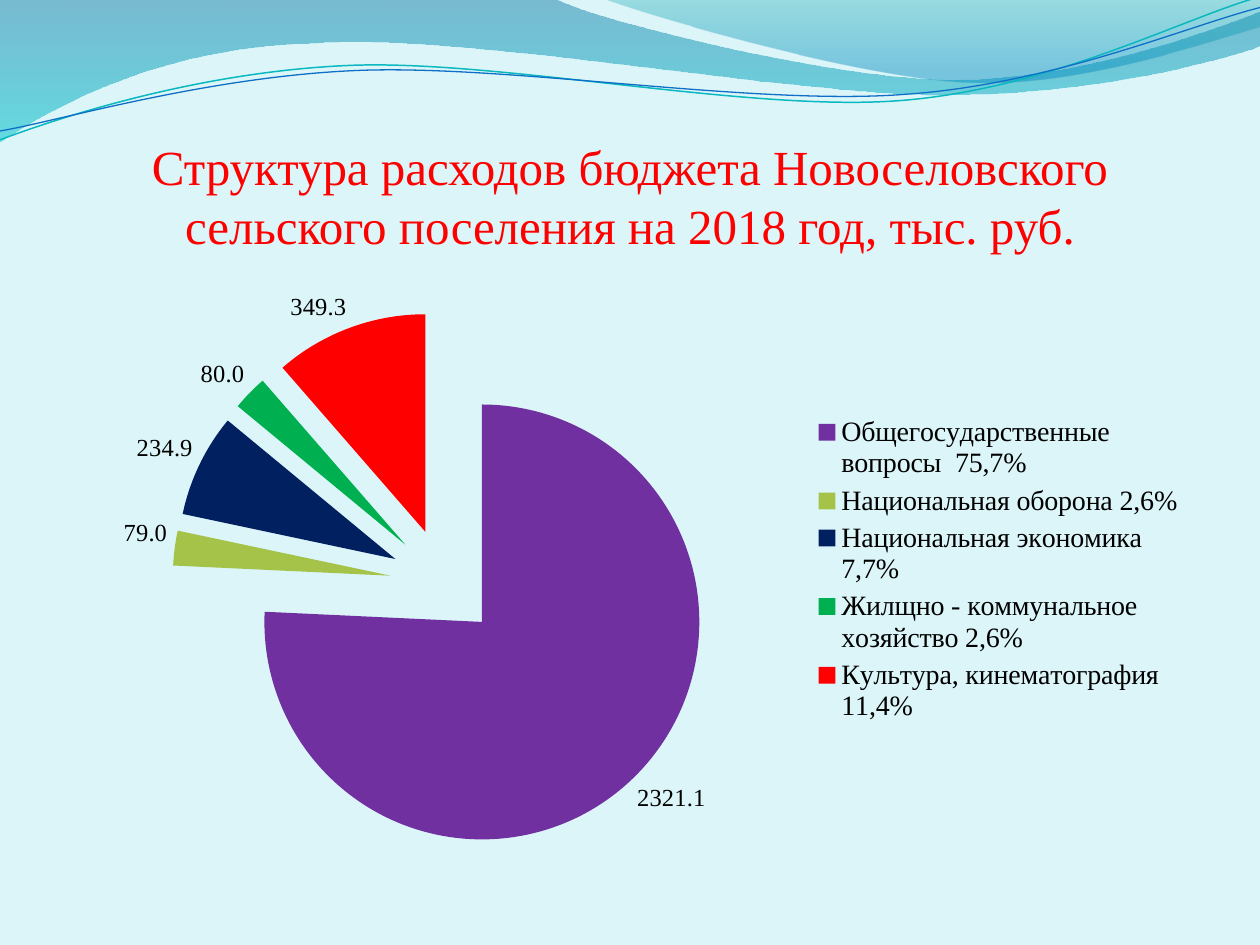
from dataclasses import dataclass

from lxml import etree
from pptx import Presentation
from pptx.chart.data import CategoryChartData
from pptx.dml.color import RGBColor
from pptx.enum.chart import XL_CHART_TYPE, XL_LABEL_POSITION, XL_LEGEND_POSITION
from pptx.enum.text import MSO_ANCHOR, PP_ALIGN
from pptx.oxml.ns import qn
from pptx.util import Inches, Pt

PIE = XL_CHART_TYPE.PIE
LEGEND_RIGHT = XL_LEGEND_POSITION.RIGHT
OUTSIDE_END = XL_LABEL_POSITION.OUTSIDE_END
BOTTOM = MSO_ANCHOR.BOTTOM
CENTER = PP_ALIGN.CENTER
TITLE_ONLY = 5
UNITS_PER_INCH = 100


@dataclass(frozen=True)
class Theme:
    font: str = "Times New Roman"
    background: str = "DBF5F9"
    title: str = "FF0000"
    text: str = "000000"
    title_size: int = 28
    legend_size: int = 16
    label_size: int = 14
    # Gradient stops: position, colour, opacity in percent
    wide_wave: tuple = ((0, "0074A1", 45), (1, "00C6CF", 55))
    right_wave: tuple = ((0, "00A1A9", 30), (0.8, "008BBF", 45))
    teal_line: str = "0AB8BF"
    blue_line: str = "0F6FC6"
    slices: tuple = ("7030A0", "A5C249", "002060", "00B050", "FF0000")


# Outlines: a pair is a corner, a triple of pairs is a Bezier segment.
WIDE_WAVE = [
    (0, 0), (4.4, -0.01),
    ((4.76, 0.17), (6.64, 0.63), (7.58, 0.63)),
    ((8.53, 0.63), (9.58, 0.26), (10, 0.09)),
    (10.01, 0.36),
    ((9.83, 0.44), (8.7, 0.76), (7.46, 0.75)),
    ((6.22, 0.75), (3.82, 0.28), (2.57, 0.34)),
    ((1.29, 0.36), (0.46, 0.83), (-0.01, 1.13)),
    (0, 0),
]
RIGHT_WAVE = [
    (4.79, -0.01),
    ((5.09, 0.11), (6.82, 0.62), (7.69, 0.65)),
    ((8.56, 0.69), (9.61, 0.32), (10, 0.21)),
    (10, 0), (4.79, -0.01),
]
TEAL_CURVE = [
    (0, 1.11),
    ((0.48, 0.93), (1.58, 0.57), (2.77, 0.52)),
    ((3.95, 0.47), (5.93, 0.89), (7.13, 0.8)),
    ((8.33, 0.71), (9.38, 0.15), (9.98, -0.02)),
]
BLUE_CURVE = [
    (0, 1.04),
    ((0.47, 0.96), (1.64, 0.61), (2.83, 0.56)),
    ((4.03, 0.51), (5.97, 0.84), (7.17, 0.75)),
    ((8.36, 0.67), (9.41, 0.21), (10, 0.06)),
]

EXPENSES = {
    "Общегосударственные вопросы  75,7%": 2321.1,
    "Национальная оборона 2,6%": 79,
    "Национальная экономика 7,7%": 234.9,
    "Жилщно - коммунальное хозяйство 2,6%": 80,
    "Культура, кинематография 11,4%": 349.3,
}


def rgb(value):
    return RGBColor.from_string(value)


def is_bezier(item):
    return isinstance(item[0], tuple)


class SlideBuilder:
    def __init__(self, prs, theme):
        self.theme = theme
        self.slide = prs.slides.add_slide(prs.slide_layouts[TITLE_ONLY])
        fill = self.slide.background.fill
        fill.solid()
        fill.fore_color.rgb = rgb(theme.background)

    def outline(self, outline, close):
        """Draw straight lines through all nodes, then merge triples into Beziers."""
        nodes = []
        for item in outline:
            nodes.extend(item if is_bezier(item) else [item])
        start, *rest = [(round(x * UNITS_PER_INCH), round(y * UNITS_PER_INCH))
                        for x, y in nodes]
        builder = self.slide.shapes.build_freeform(
            *start, scale=Inches(1) / UNITS_PER_INCH)
        builder.add_line_segments(rest, close=close)
        sp = builder.convert_to_shape()
        sp.shadow.inherit = False

        lines = iter(list(sp._element.iter(qn("a:lnTo"))))
        for item in outline[1:]:
            first = next(lines)
            if is_bezier(item):
                bezier = etree.Element(qn("a:cubicBezTo"))
                first.addprevious(bezier)
                for line in (first, next(lines), next(lines)):
                    bezier.append(line[0])
                    line.getparent().remove(line)
        return sp

    def wave(self, outline, stops):
        sp = self.outline(outline, close=True)
        sp.line.fill.background()
        sp.fill.gradient()
        sp.fill.gradient_angle = 270
        for stop, (position, color, _) in zip(sp.fill.gradient_stops, stops):
            stop.position = position
            stop.color.rgb = rgb(color)
        for clr, (_, _, opacity) in zip(sp._element.spPr.iter(qn("a:srgbClr")), stops):
            etree.SubElement(clr, qn("a:alpha"), val=str(opacity * 1000))

    def curve(self, outline, color, width):
        sp = self.outline(outline, close=False)
        sp.fill.background()
        sp.line.color.rgb = rgb(color)
        sp.line.width = Pt(width)

    def style(self, font, size, color):
        font.name = self.theme.font
        font.size = Pt(size)
        font.color.rgb = rgb(color)

    def title(self, text, left, top, width, height):
        sp = self.slide.shapes.title
        sp.left, sp.top, sp.width, sp.height = map(Inches, (left, top, width, height))
        self.slide.shapes._spTree.append(sp._element)  # bring in front of the waves
        tf = sp.text_frame
        tf.word_wrap = True
        tf.vertical_anchor = BOTTOM
        tf.margin_left = tf.margin_right = tf.margin_bottom = 0
        tf.margin_top = Inches(0.05)
        p = tf.paragraphs[0]
        p.alignment = CENTER
        r = p.add_run()
        r.text = text
        self.style(r.font, self.theme.title_size, self.theme.title)

    def pie(self, values, explosion, left, top, width, height):
        data = CategoryChartData(number_format="0.0")
        data.categories = list(values)
        data.add_series("Series 1", values.values())
        box = map(Inches, (left, top, width, height))
        chart = self.slide.shapes.add_chart(PIE, *box, data).chart
        chart.has_title = False
        self.style(chart.font, self.theme.legend_size, self.theme.text)

        chart.has_legend = True
        chart.legend.position = LEGEND_RIGHT
        chart.legend.include_in_layout = False
        self.style(chart.legend.font, self.theme.legend_size, self.theme.text)

        series = chart.plots[0].series[0]
        for i, color in enumerate(self.theme.slices):
            fill = series.points[i].format.fill
            fill.solid()
            fill.fore_color.rgb = rgb(color)
        exploded = etree.Element(qn("c:explosion"), val=str(explosion))
        series._element.find(qn("c:dPt")).addprevious(exploded)

        labels = series.data_labels
        labels.show_value = True
        labels.position = OUTSIDE_END
        labels.number_format = "0.0"
        labels.number_format_is_linked = False
        self.style(labels.font, self.theme.label_size, self.theme.text)


def main():
    prs = Presentation()
    prs.slide_width, prs.slide_height = Inches(10), Inches(7.5)
    theme = Theme()
    s = SlideBuilder(prs, theme)
    s.wave(WIDE_WAVE, theme.wide_wave)
    s.wave(RIGHT_WAVE, theme.right_wave)
    s.curve(TEAL_CURVE, theme.teal_line, 0.85)
    s.curve(BLUE_CURVE, theme.blue_line, 0.75)
    s.title("Структура расходов бюджета Новоселовского сельского поселения "
            "на 2018 год, тыс. руб.", 0.5, 0.77, 9, 1.25)
    s.pie(EXPENSES, 25, 0.5, 2.12, 9, 4.8)
    prs.save("out.pptx")


if __name__ == "__main__":
    main()
